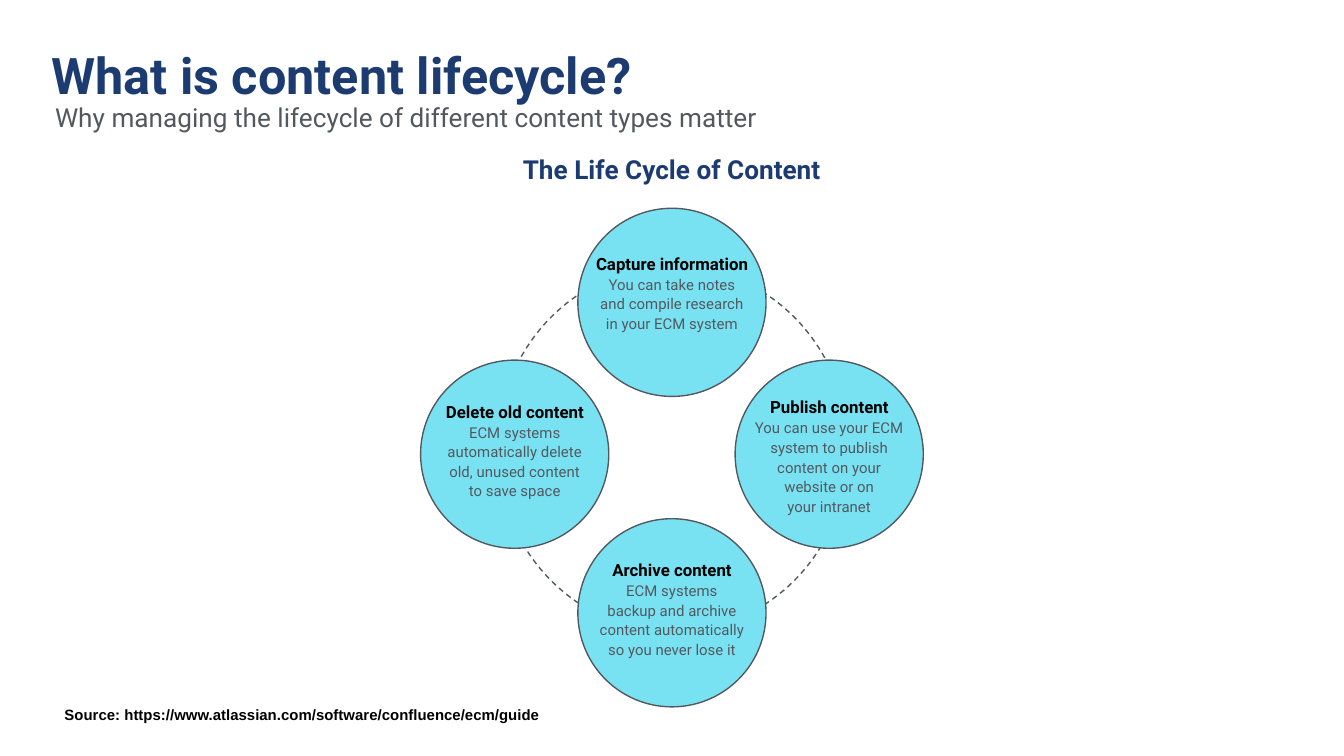
from dataclasses import dataclass

from pptx import Presentation
from pptx.dml.color import RGBColor
from pptx.enum.dml import MSO_LINE
from pptx.enum.shapes import MSO_SHAPE
from pptx.enum.text import MSO_ANCHOR, PP_ALIGN
from pptx.util import Inches, Pt

OVAL = MSO_SHAPE.OVAL
DASH = MSO_LINE.DASH
TOP = MSO_ANCHOR.TOP
LEFT, CENTER = PP_ALIGN.LEFT, PP_ALIGN.CENTER


@dataclass(frozen=True)
class Theme:
    font: str = "Roboto"
    source_font: str = "Arial"
    navy: RGBColor = RGBColor(0x1C, 0x3B, 0x71)
    gray: RGBColor = RGBColor(0x53, 0x58, 0x5F)
    cyan: RGBColor = RGBColor(0x79, 0xE2, 0xF2)
    black: RGBColor = RGBColor(0, 0, 0)
    title_size: float = 27
    heading_size: float = 14
    stage_size: float = 9
    small_size: float = 8
    line_width: float = 0.75
    line_spacing: float = 1.1


THEME = Theme()

TITLE = dict(name=THEME.font, size=Pt(THEME.title_size), bold=True, color=THEME.navy)
SUBTITLE = dict(name=THEME.font, size=Pt(THEME.heading_size), bold=False, color=THEME.gray)
HEADING = dict(SUBTITLE, bold=True, color=THEME.navy)
STAGE = dict(name=THEME.font, size=Pt(THEME.stage_size), bold=True, color=THEME.black)
DETAIL = dict(name=THEME.font, size=Pt(THEME.small_size), bold=False, color=THEME.gray)
SOURCE = dict(name=THEME.source_font, size=Pt(THEME.small_size), bold=True, color=THEME.black)

CIRCLE_SIZE = 1.4
CAPTION_WIDTH = 1.68

# Circle centre from the cycle centre, caption drop from the circle top, lines
STAGES = [
    ((0, -1.13), 0.29, ["Capture information", "You can take notes",
                        "and compile research", "in your ECM system"]),
    ((1.17, 0), 0.23, ["Publish content", "You can use your ECM", "system to publish",
                       "content on your", "website or on", "your intranet"]),
    ((0, 1.18), 0.26, ["Archive content", "ECM systems", "backup and archive",
                       "content automatically", "so you never lose it"]),
    ((-1.17, 0), 0.26, ["Delete old content", "ECM systems", "automatically delete",
                        "old, unused content", "to save space"]),
]


def add_text(slide, box, lines, inset=0.0, align=LEFT, spacing=THEME.line_spacing):
    """Place (text, format) lines in a box, one paragraph each."""
    frame = slide.shapes.add_textbox(*map(Inches, box)).text_frame
    frame.word_wrap = True
    frame.vertical_anchor = TOP
    for side in ("left", "top", "right", "bottom"):
        setattr(frame, f"margin_{side}", Inches(inset))
    for index, (text, text_format) in enumerate(lines):
        paragraph = frame.paragraphs[0] if index == 0 else frame.add_paragraph()
        paragraph.alignment = align
        paragraph.line_spacing = spacing
        run = paragraph.add_run()
        run.text = text
        for key, value in text_format.items():
            if key == "color":
                run.font.color.rgb = value
            else:
                setattr(run.font, key, value)


def add_circle(slide, box, fill=None, dash=None):
    shape = slide.shapes.add_shape(OVAL, *map(Inches, box))
    shape.shadow.inherit = False
    if fill is None:
        shape.fill.background()
    else:
        shape.fill.solid()
        shape.fill.fore_color.rgb = fill
    shape.line.color.rgb = THEME.gray
    shape.line.width = Pt(THEME.line_width)
    if dash is not None:
        shape.line.dash_style = dash


def add_header(slide, box):
    left, top, width, _ = box
    add_text(slide, (left, top, width, 0.35), [("What is content lifecycle?", TITLE)])
    subtitle = "Why managing the lifecycle of different content types matter"
    add_text(slide, (left, top + 0.42, 5.36, 0.25), [(subtitle, SUBTITLE)], inset=0.03)


def add_cycle(slide, box):
    left, top, width, _ = box
    center_x, center_y = left + width / 2, top + 2.26

    # Heading and dashed ring
    add_text(slide, (left + 0.9, top, 2.23, 0.25), [("The Life Cycle of Content", HEADING)])
    add_circle(slide, (center_x - 1.3, center_y - 1.4, 2.61, 2.72), dash=DASH)

    # Stages around the ring
    for (dx, dy), drop, (name, *details) in STAGES:
        x = center_x + dx
        y = center_y + dy - CIRCLE_SIZE / 2
        add_circle(slide, (x - CIRCLE_SIZE / 2, y, CIRCLE_SIZE, CIRCLE_SIZE), fill=THEME.cyan)
        lines = [(name, STAGE)] + [(detail, DETAIL) for detail in details]
        height = 0.19 + 0.15 * len(details)
        add_text(slide, (x - CAPTION_WIDTH / 2, y + drop, CAPTION_WIDTH, height),
                 lines, inset=0.03, align=CENTER)


def add_source(slide, box):
    text = "Source: https://www.atlassian.com/software/confluence/ecm/guide"
    add_text(slide, box, [(text, SOURCE)], spacing=1.0)


def main():
    presentation = Presentation()
    presentation.slide_width = Inches(10)
    presentation.slide_height = Inches(10) * 9 // 16
    slide = presentation.slides.add_slide(presentation.slide_layouts[6])
    add_header(slide, (0.38, 0.28, 8.62, 0.67))
    add_cycle(slide, (2.99, 1.12, 4.02, 4.14))
    add_source(slide, (0.48, 5.25, 3.74, 0.13))
    presentation.save("out.pptx")


if __name__ == "__main__":
    main()
